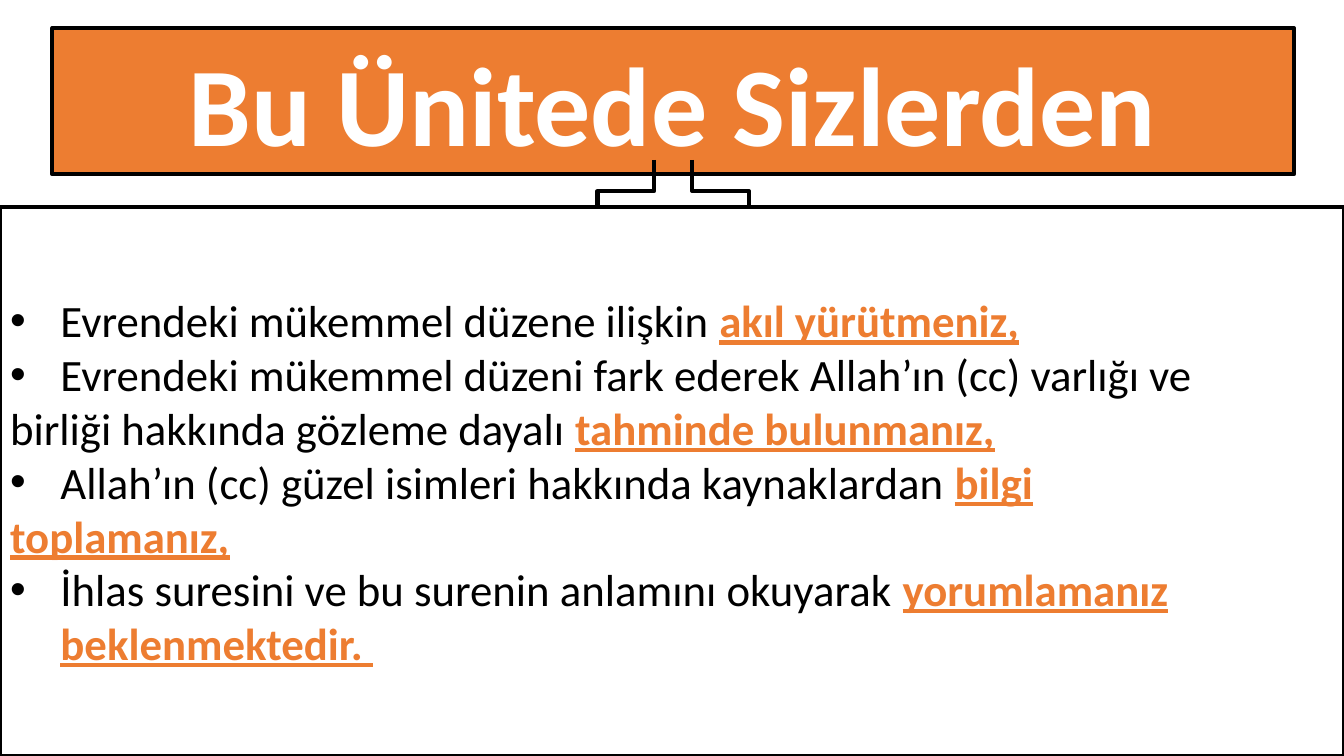
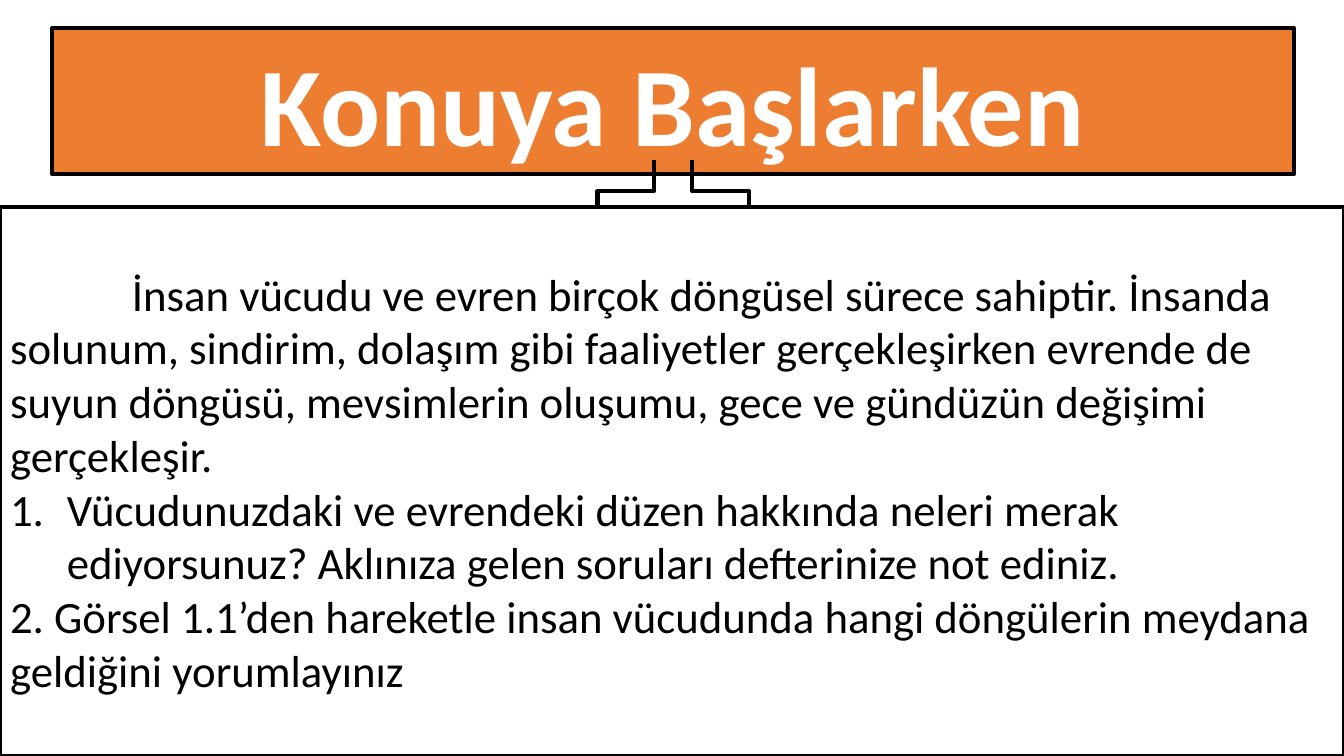
from dataclasses import dataclass

from lxml import etree
from pptx import Presentation
from pptx.dml.color import RGBColor
from pptx.enum.shapes import MSO_CONNECTOR as Connector
from pptx.enum.text import MSO_ANCHOR as Anchor, MSO_AUTO_SIZE as AutoSize, PP_ALIGN as Align
from pptx.oxml.ns import qn
from pptx.util import Cm, Pt

SLIDE_W, SLIDE_H = 33.87, 19.05
ORANGE, BLACK, WHITE = "ED7D31", "000000", "FFFFFF"
FONT = "Calibri"
BANNER = (1.32, 0.71, 31.29, 3.68)
PANEL = (0, 5.21, SLIDE_W, 13.84)


@dataclass
class Para:
    """One body paragraph; blank_to is where an underlined blank ends."""
    plain: str = ""
    stressed: str = ""
    bullet: str = ""
    hang: float = 0
    first_line: float = 0
    blank_to: float = 0


EXPECTATIONS = [
    Para("Evrendeki mükemmel düzene ilişkin ", "akıl yürütmeniz,", "•", 1.27, blank_to=29.24),
    Para("Evrendeki mükemmel düzeni fark ederek Allah’ın (cc) varlığı ve", "", "•", 1.27),
    Para("birliği hakkında gözleme dayalı ", "tahminde bulunmanız,", blank_to=26.36),
    Para("Allah’ın (cc) güzel isimleri hakkında kaynaklardan ", "bilgi", "•", 1.27),
    Para("", "toplamanız,", blank_to=31.85),
    Para("İhlas suresini ve bu surenin anlamını okuyarak ",
         "yorumlamanız beklenmektedir. ", "•", 1.27),
]
WARM_UP = [
    Para("İnsan vücudu ve evren birçok döngüsel sürece sahiptir. İnsanda solunum, "
         "sindirim, dolaşım gibi faaliyetler gerçekleşirken evrende de suyun döngüsü, "
         "mevsimlerin oluşumu, gece ve gündüzün değişimi gerçekleşir.", first_line=3.07),
    Para("Vücudunuzdaki ve evrendeki düzen hakkında neleri merak ediyorsunuz? "
         "Aklınıza gelen soruları defterinize not ediniz.", bullet="1.", hang=1.43),
    Para("2. Görsel 1.1’den hareketle insan vücudunda hangi döngülerin meydana "
         "geldiğini yorumlayınız"),
]


def rgb(hex_code):
    return RGBColor.from_string(hex_code)


def add_child(parent, tag, **attributes):
    child = etree.SubElement(parent, qn(tag))
    for key, value in attributes.items():
        child.set(key, str(value))
    return child


def style_box(box, bounds, fill, anchor):
    """Place a placeholder and give it a fill and the thick black outline."""
    box.left, box.top, box.width, box.height = (Cm(length) for length in bounds)
    box.fill.solid()
    box.fill.fore_color.rgb = rgb(fill)
    box.line.color.rgb = rgb(BLACK)
    box.line.width = Pt(3)
    frame = box.text_frame
    frame.word_wrap = True
    frame.auto_size = AutoSize.NONE
    frame.vertical_anchor = anchor
    return frame


def style_font(font, size, color, bold=False):
    font.name, font.size, font.bold = FONT, Pt(size), bold
    font.color.rgb = rgb(color)


def fill_banner(banner, heading, bounds):
    frame = style_box(banner, bounds, ORANGE, Anchor.MIDDLE)
    frame.text = heading
    line = frame.paragraphs[0]
    line.alignment = Align.CENTER
    style_font(line.font, 80, WHITE, bold=True)


def add_fork(slide, bounds):
    """Two bent arrows leading from the banner down behind the panel."""
    left, top, width, height = bounds
    drop, spread, gap = 1.57, 1.43, 0.48
    center_y = top + height - 0.36 + drop / 2
    for side, turn in ((-1, 90), (1, 270)):
        center_x = left + width / 2 + side * (gap + spread / 2)
        # A quarter turn makes the elbow start and end vertically.
        arrow = slide.shapes.add_connector(
            Connector.ELBOW,
            Cm(center_x + side * drop / 2), Cm(center_y - spread / 2),
            Cm(center_x - side * drop / 2), Cm(center_y + spread / 2))
        arrow.line.color.rgb = rgb(BLACK)
        arrow.line.width = Pt(3)
        properties = arrow._element.spPr
        properties.find(qn("a:xfrm")).set("rot", str(turn * 60000))
        add_child(properties.find(qn("a:ln")), "a:tailEnd", type="triangle")
        add_child(properties, "a:effectLst")


def set_list_format(line, para):
    properties = line._p.get_or_add_pPr()
    properties.set("marL", str(Cm(para.hang)))
    properties.set("indent", str(Cm(para.first_line - para.hang)))
    if para.bullet == "•":
        add_child(properties, "a:buFont", typeface="Arial")
        add_child(properties, "a:buChar", char=para.bullet)
    elif para.bullet:
        add_child(properties, "a:buFont", typeface="+mj-lt")
        add_child(properties, "a:buAutoNum", type="arabicPeriod")
    else:
        add_child(properties, "a:buNone")
    if para.blank_to:
        stops = add_child(properties, "a:tabLst")
        add_child(stops, "a:tab", pos=Cm(para.blank_to), algn="l")


def fill_panel(panel, paras, bounds):
    frame = style_box(panel, bounds, WHITE, Anchor.MIDDLE)
    for index, para in enumerate(paras):
        line = frame.add_paragraph() if index else frame.paragraphs[0]
        set_list_format(line, para)
        line.alignment = Align.LEFT
        line.space_before = Pt(0)
        style_font(line.font, 32, BLACK)
        if para.plain:
            line.add_run().text = para.plain
        if para.stressed:
            stressed = line.add_run()
            stressed.text = para.stressed + ("\t" if para.blank_to else "")
            stressed.font.bold = stressed.font.underline = True
            stressed.font.color.rgb = rgb(ORANGE)


def add_unit_slide(deck, heading, paras):
    slide = deck.slides.add_slide(deck.slide_layouts[1])
    panel = slide.placeholders[1]
    fill_banner(slide.shapes.title, heading, BANNER)
    add_fork(slide, BANNER)
    fill_panel(panel, paras, PANEL)
    slide.shapes._spTree.append(panel._element)  # the panel covers the arrowheads


def main():
    deck = Presentation()
    deck.slide_width, deck.slide_height = Cm(SLIDE_W), Cm(SLIDE_H)
    add_unit_slide(deck, "Bu Ünitede Sizlerden", EXPECTATIONS)
    add_unit_slide(deck, "Konuya Başlarken", WARM_UP)
    deck.save("out.pptx")


if __name__ == "__main__":
    main()
